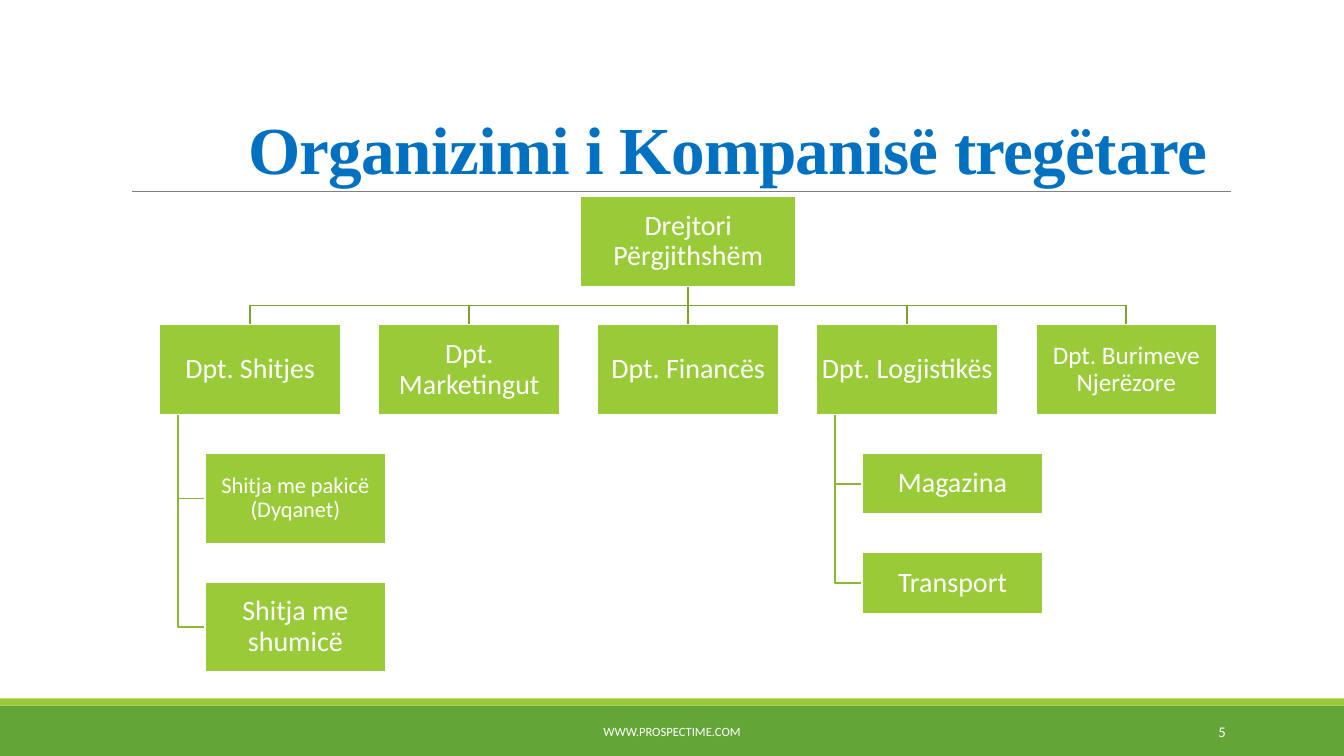
import pptx
import pptx.dml.color
import pptx.enum.shapes
import pptx.enum.text
import pptx.oxml
import pptx.util

Cm = pptx.util.Cm
Pt = pptx.util.Pt
ALIGN = pptx.enum.text.PP_ALIGN
ANCHOR = pptx.enum.text.MSO_ANCHOR

LIME = "99CB38"
GREEN = "63A537"
WHITE = "FFFFFF"
BRANCH = "7BA32D"
STEM = "8BB833"

BOX_WIDTH = 4.57
BOX_HEIGHT = 2.28
GAP = 0.96
COLUMN_STEP = 5.52
FIRST_LEFT = 4.02
DEPARTMENT_TOP = 8.18
DIRECTOR_WIDTH = 5.44
CHILD_INDENT = 1.14
STEM_INDENT = 0.46

DEPARTMENTS = [
    ("Dpt. Shitjes", 20, BOX_HEIGHT,
     [("Shitja me pakicë (Dyqanet)", 16), ("Shitja me shumicë", 20)]),
    ("Dpt. Marketingut", 20, 0, []),
    ("Dpt. Financës", 20, 0, []),
    ("Dpt. Logjistikës", 20, 1.54, [("Magazina", 20), ("Transport", 20)]),
    ("Dpt. Burimeve Njerëzore", 18, 0, []),
]


def colour(value):
    return pptx.dml.color.RGBColor.from_string(value)


def apply_format(target, values):
    for name, value in values.items():
        setattr(target, name, value)


def style_line(line, value, width):
    line.color.rgb = colour(value)
    line.width = Pt(width)


def write_text(shape, text, size, text_colour=WHITE, font="Calibri", bold=False,
               align=ALIGN.CENTER, anchor=ANCHOR.MIDDLE, spacing=1.0, inset=None):
    frame = shape.text_frame
    apply_format(frame, {"word_wrap": True, "vertical_anchor": anchor})
    if inset is not None:
        sides = ("margin_left", "margin_top", "margin_right", "margin_bottom")
        apply_format(frame, dict.fromkeys(sides, Cm(inset)))
    paragraph = frame.paragraphs[0]
    apply_format(paragraph, {"alignment": align, "line_spacing": spacing})
    run = paragraph.add_run()
    run.text = text
    apply_format(run.font, {"name": font, "size": Pt(size), "bold": bold})
    run.font.color.rgb = colour(text_colour)
    return run


def add_text(slide, place, text, size, **options):
    box = slide.shapes.add_textbox(*map(Cm, place))
    return write_text(box, text, size, **options)


def add_rectangle(slide, place, fill):
    kind = pptx.enum.shapes.MSO_SHAPE.RECTANGLE
    shape = slide.shapes.add_shape(kind, *map(Cm, place))
    shape.shadow.inherit = False
    shape.fill.solid()
    shape.fill.fore_color.rgb = colour(fill)
    shape.line.fill.background()
    return shape


def add_unit(slide, place, text, size):
    shape = add_rectangle(slide, place, LIME)
    style_line(shape.line, WHITE, 1.25)
    write_text(shape, text, size, spacing=0.9, inset=0.03)


def add_line(slide, ends, value, width):
    kind = pptx.enum.shapes.MSO_CONNECTOR.STRAIGHT
    line = slide.shapes.add_connector(kind, *map(Cm, ends))
    style_line(line.line, value, width)
    effects = pptx.oxml.parse_xml(
        '<a:effectLst xmlns:a="http://schemas.openxmlformats.org/drawingml/2006/main"/>')
    line._element.spPr.append(effects)


def add_elbow(slide, points, value):
    corners = [(Cm(x), Cm(y)) for x, y in points]
    builder = slide.shapes.build_freeform(*corners[0])
    builder.add_line_segments(corners[1:], close=False)
    shape = builder.convert_to_shape()
    shape.shadow.inherit = False
    shape.fill.background()
    style_line(shape.line, value, 1.25)


def add_children(slide, left, height, children):
    start = DEPARTMENT_TOP + BOX_HEIGHT
    stem = left + STEM_INDENT
    child_left = left + CHILD_INDENT
    for index, (text, size) in enumerate(children):
        top = start + GAP + index * (height + GAP)
        middle = top + height / 2
        add_elbow(slide, [(stem, start), (stem, middle), (child_left, middle)], STEM)
        add_unit(slide, (child_left, top, BOX_WIDTH, height), text, size)


def add_chart_tree(slide):
    centre = FIRST_LEFT + 2 * COLUMN_STEP + BOX_WIDTH / 2
    director_bottom = DEPARTMENT_TOP - GAP
    bend = DEPARTMENT_TOP - GAP / 2
    for index, (text, size, child_height, children) in enumerate(DEPARTMENTS):
        left = FIRST_LEFT + index * COLUMN_STEP
        middle = left + BOX_WIDTH / 2
        if index == 2:
            add_line(slide, (centre, director_bottom, centre, DEPARTMENT_TOP), BRANCH, 1.25)
        else:
            add_elbow(slide, [(centre, director_bottom), (centre, bend),
                              (middle, bend), (middle, DEPARTMENT_TOP)], BRANCH)
        add_unit(slide, (left, DEPARTMENT_TOP, BOX_WIDTH, BOX_HEIGHT), text, size)
        add_children(slide, left, child_height, children)
    add_unit(slide, (centre - DIRECTOR_WIDTH / 2, director_bottom - BOX_HEIGHT,
                     DIRECTOR_WIDTH, BOX_HEIGHT), "Drejtori Përgjithshëm", 20)


def main():
    presentation = pptx.Presentation()
    apply_format(presentation, {"slide_width": Cm(33.87), "slide_height": Cm(19.05)})
    slide = presentation.slides.add_slide(presentation.slide_layouts[6])
    add_rectangle(slide, (0, 17.78, 33.87, 1.27), GREEN)
    add_rectangle(slide, (0, 17.6, 33.87, 0.18), LIME)
    add_line(slide, (3.33, 4.83, 31.01, 4.83), "808080", 0.5)
    title = add_text(slide, (5.51, 1.7, 25.65, 3.18), "Organizimi i Kompanisë tregëtare", 48,
                     text_colour="0070C0", font="Times New Roman", bold=True,
                     anchor=ANCHOR.BOTTOM, spacing=0.85)
    title.font._element.set("spc", "-50")
    add_chart_tree(slide)
    add_text(slide, (10.24, 17.93, 13.39, 1.02), "WWW.PROSPECTIME.COM", 9)
    add_text(slide, (27.51, 17.93, 3.63, 1.02), "5", 10.5, align=ALIGN.RIGHT)
    presentation.save("out.pptx")


if __name__ == "__main__":
    main()
